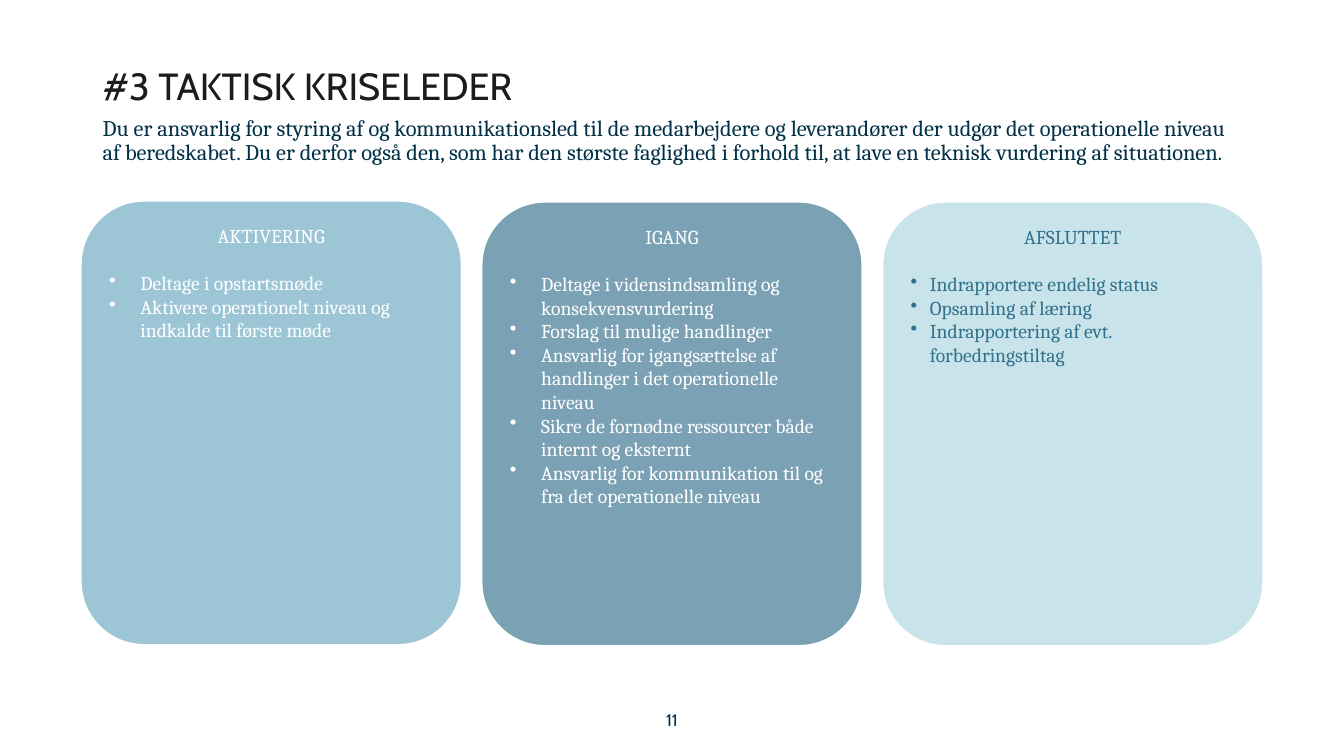
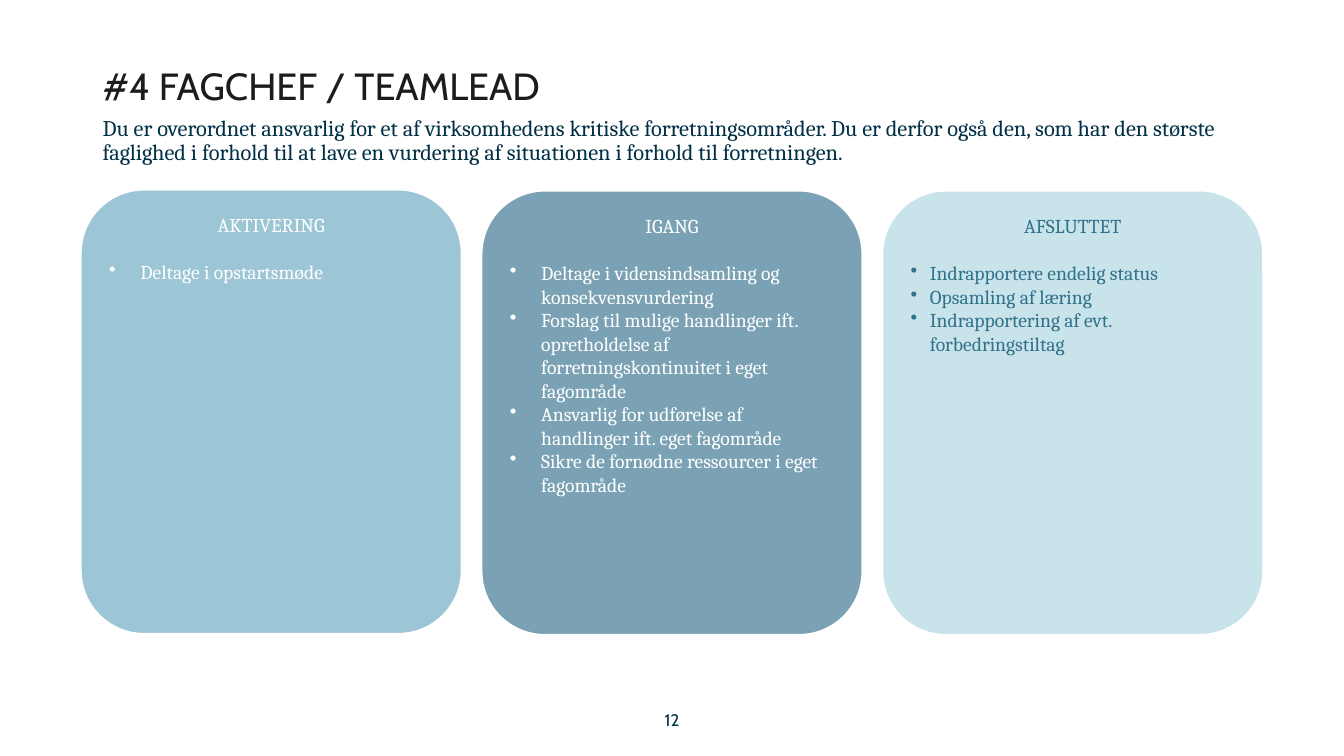
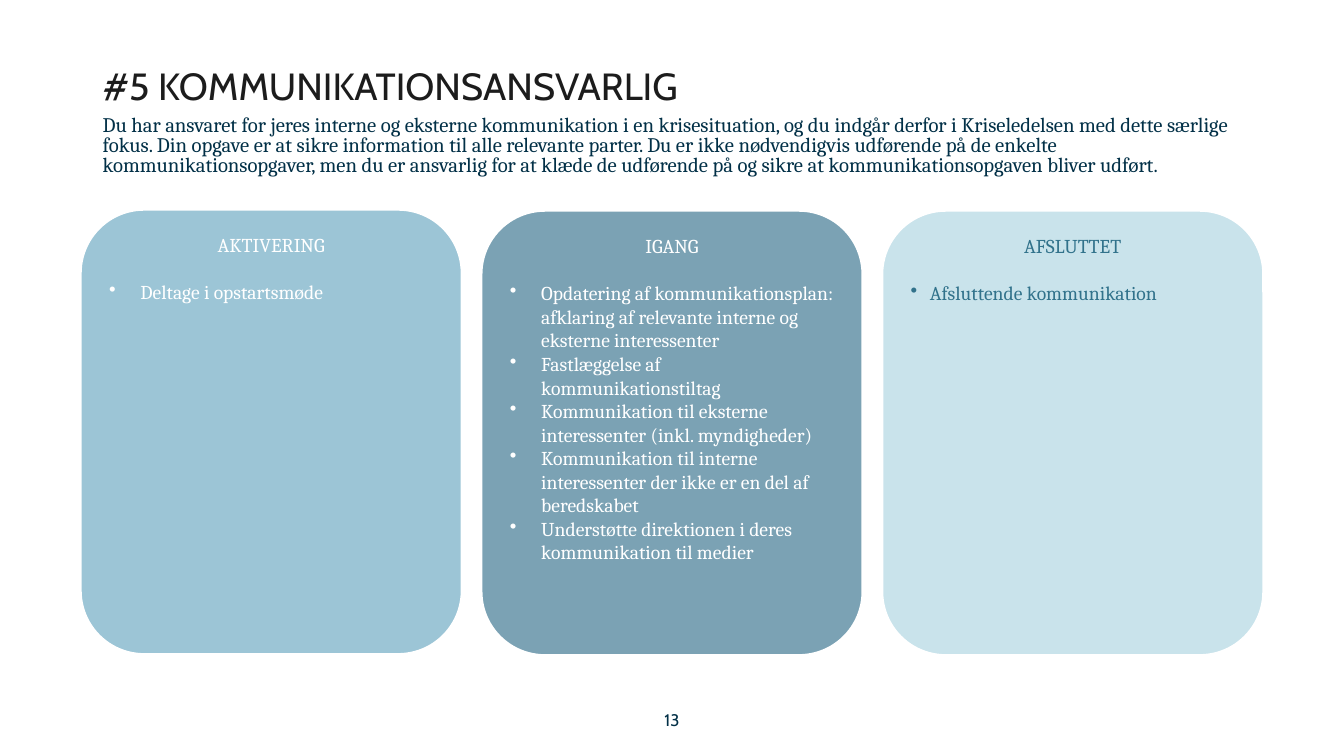
from dataclasses import dataclass

from lxml import etree
from pptx import Presentation
from pptx import util as u
from pptx.dml.color import RGBColor
from pptx.enum import shapes, text
from pptx.oxml import ns


@dataclass(frozen=True)
class Theme:
    background: str = "FFFFFF"
    outline: str = "FFFFFF"
    title_ink: str = "1C1C1C"
    body_ink: str = "023047"
    title_font: str = "Cabin"
    body_font: str = "Cambria"
    title_size: float = 27
    intro_size: float = 16
    dense_intro_size: float = 14.8
    card_size: float = 14
    number_size: float = 12
    heading_gap: float = 16.8
    outline_width: float = 1.5


@dataclass(frozen=True)
class Phase:
    heading: str
    fill: str
    ink: str
    indent: float
    drop: float


@dataclass(frozen=True)
class Role:
    number: int
    title: str
    intro: str
    card_top: float
    tasks: tuple[tuple[str, ...], ...]
    intro_size: float
    intro_spacing: float = 0.9


THEME = Theme()
SLIDE_WIDTH, SLIDE_HEIGHT = 13.33, 7.5
TEXT_LEFT, TEXT_WIDTH = 0.92, 11.5
CARDS_LEFT, CARDS_RIGHT = 0.8, 12.53
CARD_WIDTH, CARD_HEIGHT = 3.78, 4.41

PHASES = (
    Phase("AKTIVERING", "9CC5D6", "FFFFFF", 0.31, 0),
    Phase("IGANG", "7BA2B4", "FFFFFF", 0.31, 0.01),
    Phase("AFSLUTTET", "C9E3EB", "31728B", 0.19, 0.01),
)
START_MEETING = "Deltage i opstartsmøde"
GATHER_KNOWLEDGE = "Deltage i vidensindsamling og konsekvensvurdering"
CLOSING_TASKS = (
    "Indrapportere endelig status",
    "Opsamling af læring",
    "Indrapportering af evt. forbedringstiltag",
)

ROLES = (
    Role(
        11,
        "#3 TAKTISK KRISELEDER",
        "Du er ansvarlig for styring af og kommunikationsled til de medarbejdere og "
        "leverandører der udgør det operationelle niveau af beredskabet. Du er derfor "
        "også den, som har den største faglighed i forhold til, at lave en teknisk "
        "vurdering af situationen.",
        1.99,
        (
            (START_MEETING, "Aktivere operationelt niveau og indkalde til første møde"),
            (
                GATHER_KNOWLEDGE,
                "Forslag til mulige handlinger",
                "Ansvarlig for igangsættelse af handlinger i det operationelle niveau",
                "Sikre de fornødne ressourcer både internt og eksternt",
                "Ansvarlig for kommunikation til og fra det operationelle niveau",
            ),
            CLOSING_TASKS,
        ),
        THEME.intro_size,
    ),
    Role(
        12,
        "#4 FAGCHEF / TEAMLEAD",
        "Du er overordnet ansvarlig for et af virksomhedens kritiske forretningsområder. "
        "Du er derfor også den, som har den største faglighed i forhold til at lave en "
        "vurdering af situationen i forhold til forretningen.",
        1.88,
        (
            (START_MEETING,),
            (
                GATHER_KNOWLEDGE,
                "Forslag til mulige handlinger ift. opretholdelse af "
                "forretningskontinuitet i eget fagområde",
                "Ansvarlig for udførelse af handlinger ift. eget fagområde",
                "Sikre de fornødne ressourcer i eget fagområde",
            ),
            CLOSING_TASKS,
        ),
        THEME.intro_size,
    ),
    Role(
        13,
        "#5 KOMMUNIKATIONSANSVARLIG",
        "Du har ansvaret for jeres interne og eksterne kommunikation i en krisesituation, "
        "og du indgår derfor i Kriseledelsen med dette særlige fokus. Din opgave er at "
        "sikre information til alle relevante parter. Du er ikke nødvendigvis udførende "
        "på de enkelte kommunikationsopgaver, men du er ansvarlig for at klæde de "
        "udførende på og sikre at kommunikationsopgaven bliver udført.",
        2.08,
        (
            (START_MEETING,),
            (
                "Opdatering af kommunikationsplan: afklaring af relevante interne og "
                "eksterne interessenter",
                "Fastlæggelse af kommunikationstiltag",
                "Kommunikation til eksterne interessenter (inkl. myndigheder)",
                "Kommunikation til interne interessenter der ikke er en del af beredskabet",
                "Understøtte direktionen i deres kommunikation til medier",
            ),
            ("Afsluttende kommunikation",),
        ),
        THEME.dense_intro_size,
        0.8,
    ),
)


def add_span(para, words: str, font: str, size: float, ink: str) -> None:
    span = para.add_run()
    span.text = words
    span.font.name = font
    span.font.size = u.Pt(size)
    span.font.color.rgb = RGBColor.from_string(ink)


def add_text_box(page, left: float, top: float, width: float, height: float):
    """Add a wrapping text box and return its text frame."""
    box = page.shapes.add_textbox(
        u.Inches(left), u.Inches(top), u.Inches(width), u.Inches(height)
    )
    box.text_frame.word_wrap = True
    return box.text_frame


def set_bullet(para, indent: float) -> None:
    """Give the paragraph a bullet with a hanging indent in inches."""
    properties = para._p.get_or_add_pPr()
    properties.set("marL", str(u.Inches(indent)))
    properties.set("indent", str(-u.Inches(indent)))
    etree.SubElement(properties, ns.qn("a:buChar")).set("char", "•")


def add_card(page, phase: Phase, tasks: tuple[str, ...], left: float, top: float) -> None:
    card = page.shapes.add_shape(
        shapes.MSO_SHAPE.ROUNDED_RECTANGLE,
        u.Inches(left), u.Inches(top), u.Inches(CARD_WIDTH), u.Inches(CARD_HEIGHT),
    )
    card.shadow.inherit = False
    card.fill.solid()
    card.fill.fore_color.rgb = RGBColor.from_string(phase.fill)
    card.line.color.rgb = RGBColor.from_string(THEME.outline)
    card.line.width = u.Pt(THEME.outline_width)

    frame = card.text_frame
    frame.word_wrap = True
    frame.vertical_anchor = text.MSO_ANCHOR.TOP
    heading = frame.paragraphs[0]
    heading.alignment = text.PP_ALIGN.CENTER
    heading.space_after = u.Pt(THEME.heading_gap)
    add_span(heading, phase.heading, THEME.body_font, THEME.card_size, phase.ink)
    for task in tasks:
        para = frame.add_paragraph()
        para.alignment = text.PP_ALIGN.LEFT
        set_bullet(para, phase.indent)
        add_span(para, task, THEME.body_font, THEME.card_size, phase.ink)


def add_role_page(deck, role: Role) -> None:
    page = deck.slides.add_slide(deck.slide_layouts[6])
    page.background.fill.solid()
    page.background.fill.fore_color.rgb = RGBColor.from_string(THEME.background)

    pitch = (CARDS_RIGHT - CARDS_LEFT - CARD_WIDTH) / (len(PHASES) - 1)
    for column, (phase, tasks) in enumerate(zip(PHASES, role.tasks)):
        add_card(page, phase, tasks, CARDS_LEFT + column * pitch, role.card_top + phase.drop)

    title = add_text_box(page, TEXT_LEFT, 0.57, TEXT_WIDTH, 0.55).paragraphs[0]
    add_span(title, role.title, THEME.title_font, THEME.title_size, THEME.title_ink)

    intro = add_text_box(page, TEXT_LEFT, 1.11, TEXT_WIDTH, 0.97).paragraphs[0]
    intro.line_spacing = role.intro_spacing
    add_span(intro, role.intro, THEME.body_font, role.intro_size, THEME.body_ink)

    footer = add_text_box(page, (SLIDE_WIDTH - 3) / 2, 6.94, 3, 0.4)
    footer.vertical_anchor = text.MSO_ANCHOR.MIDDLE
    number = footer.paragraphs[0]
    number.alignment = text.PP_ALIGN.CENTER
    add_span(number, str(role.number), THEME.title_font, THEME.number_size, THEME.body_ink)


def main() -> None:
    deck = Presentation()
    deck.slide_width = u.Inches(SLIDE_WIDTH)
    deck.slide_height = u.Inches(SLIDE_HEIGHT)
    for role in ROLES:
        add_role_page(deck, role)
    deck.save("out.pptx")


if __name__ == "__main__":
    main()
